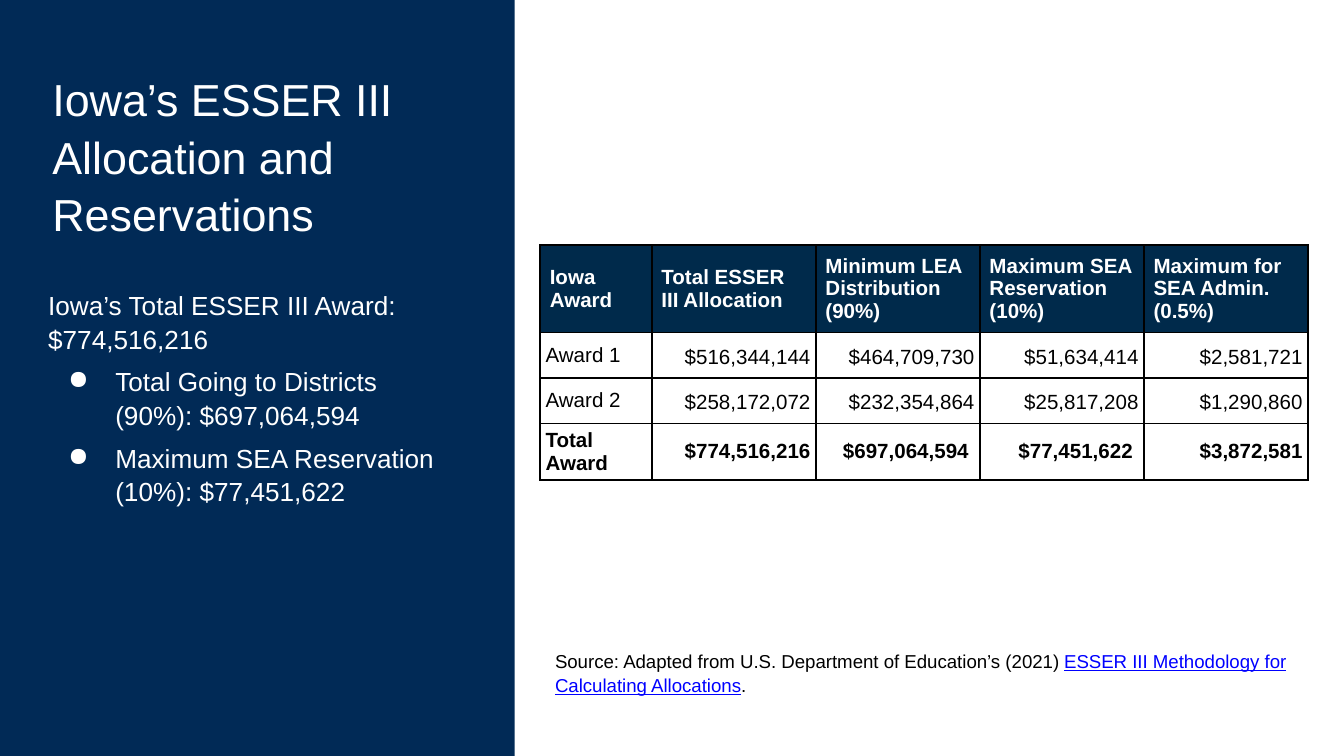
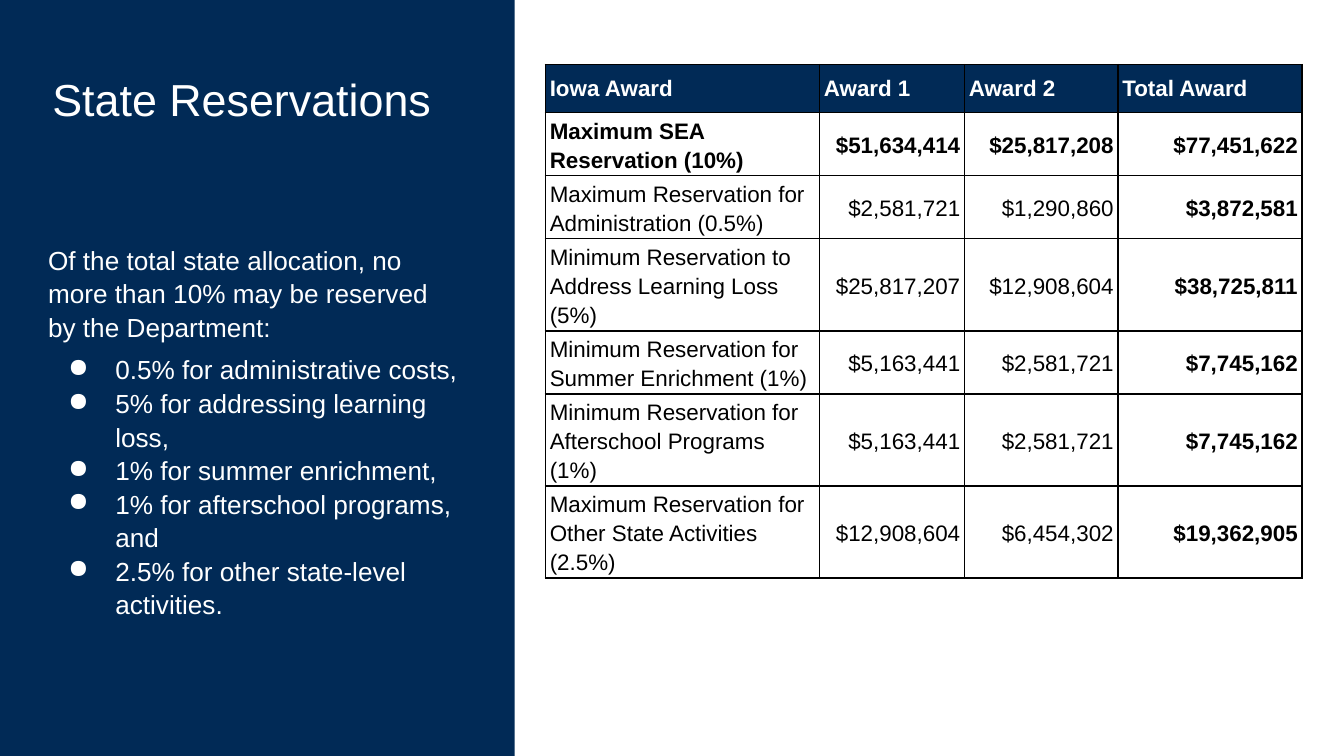
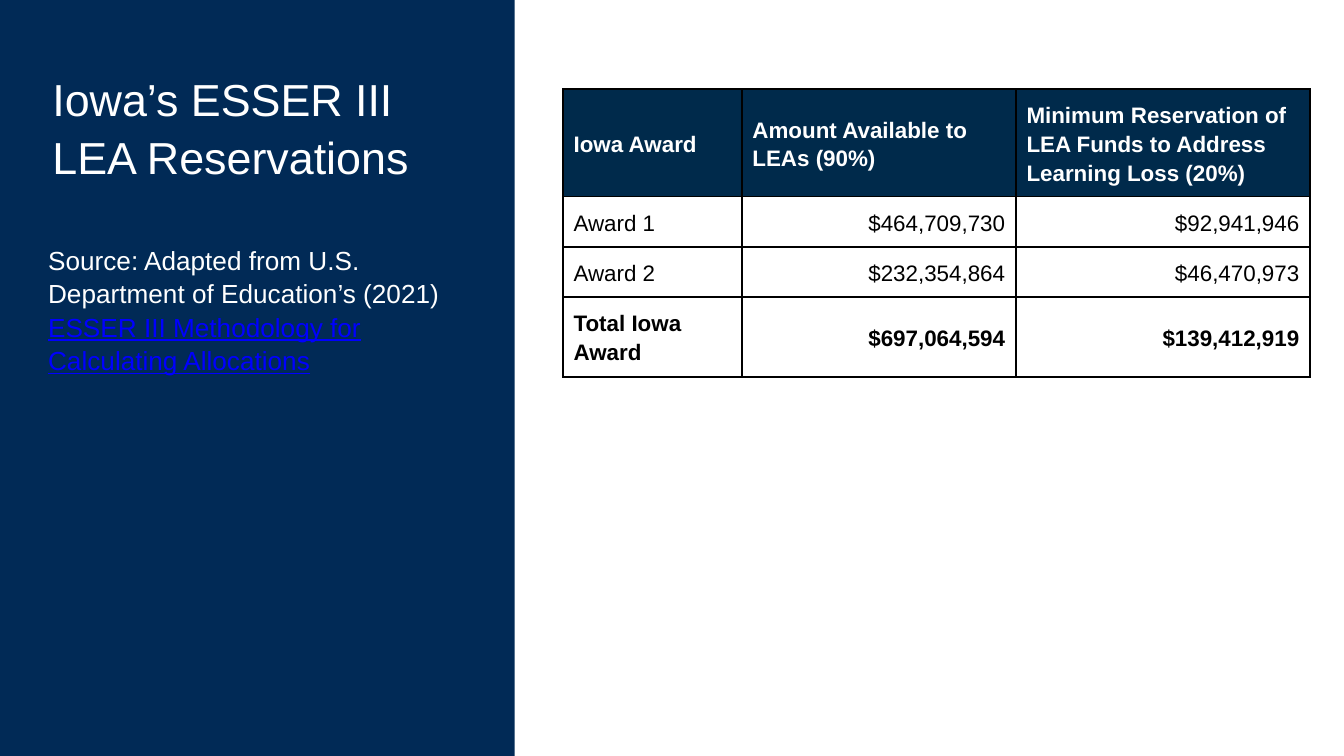
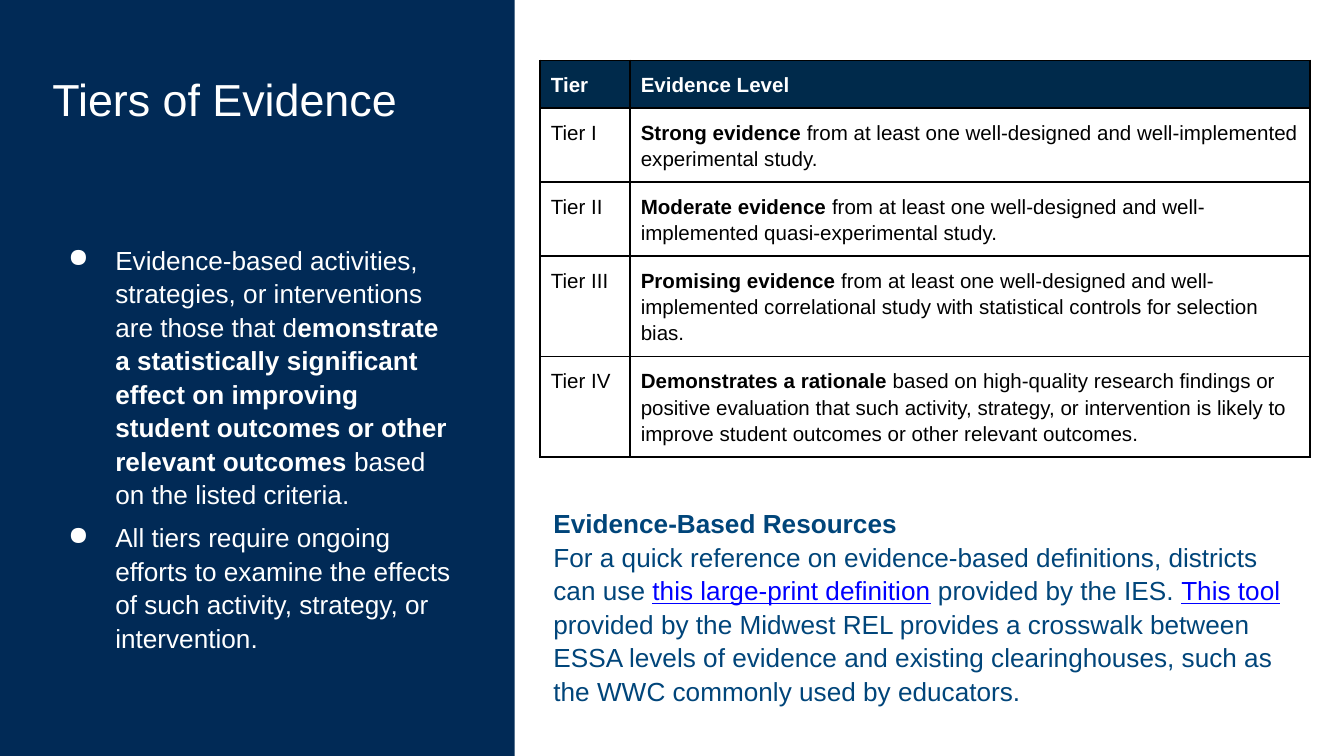
from lxml.etree import SubElement
from pptx import Presentation
from pptx.dml.color import RGBColor
from pptx.enum.shapes import MSO_SHAPE
from pptx.enum.text import MSO_ANCHOR, MSO_AUTO_SIZE, PP_ALIGN
from pptx.oxml import parse_xml
from pptx.oxml.ns import nsdecls, qn
from pptx.util import Cm, Pt

NAVY = RGBColor(0x01, 0x2A, 0x56)
DARK = RGBColor(0x00, 0x2A, 0x4B)
TEAL = RGBColor(0x00, 0x45, 0x7A)
LINK_BLUE = RGBColor(0x00, 0x00, 0xFF)
WHITE = RGBColor(0xFF, 0xFF, 0xFF)
BLACK = RGBColor(0x00, 0x00, 0x00)

FONT = "Arial"
TITLE_ONLY = 5
BOX_SPACING = 1.07
CELL_SPACING = 1.15
BODY_LEFT, BODY_WIDTH, BODY_BOTTOM = 0.66, 8.26, 13.26

BOLD = {"bold": True}
LINK = {"color": LINK_BLUE, "underline": True}


class Deck:
    def __init__(self):
        self.prs = Presentation()
        self.prs.slide_width, self.prs.slide_height = Cm(25.4), Cm(14.29)
        self.layout = self.prs.slide_layouts[TITLE_ONLY]
        self.s = None

    def slide(self, title):
        first = self.s is None
        self.s = self.prs.slides.add_slide(self.layout)
        if first:
            self.panel()
        sp = self.s.shapes.title
        sp.left, sp.top, sp.width, sp.height = Cm(0.74), Cm(1.04), Cm(8.18), Cm(2.77)
        self.frame(sp.text_frame)
        self.fill_paragraph(sp.text_frame.paragraphs[0], title, 24, WHITE)

    def panel(self):
        """Draw the left band and move it to the layout, so that every slide shows it."""
        sp = self.s.shapes.add_shape(MSO_SHAPE.RECTANGLE, Cm(-0.1), Cm(-0.08), Cm(9.83), Cm(14.43))
        sp.shadow.inherit = False
        sp.fill.solid()
        sp.fill.fore_color.rgb = NAVY
        sp.line.fill.background()
        self.layout.shapes._spTree.insert(2, sp._element)

    def frame(self, tf):
        margins = {f"margin_{side}": Cm(0.25) for side in ("left", "top", "right", "bottom")}
        settings = {"word_wrap": True, "auto_size": MSO_AUTO_SIZE.NONE,
                    "vertical_anchor": MSO_ANCHOR.TOP, **margins}
        for name, value in settings.items():
            setattr(tf, name, value)

    def fill_paragraph(self, p, runs, size, color, bold=False, spacing=BOX_SPACING,
                       align=PP_ALIGN.LEFT, before=0):
        """Write runs, each a string or a (string, format) pair, into a paragraph."""
        p.alignment, p.line_spacing, p.space_before = align, spacing, Pt(before)
        for run in [runs] if isinstance(runs, str) else runs:
            text, extra = (run, {}) if isinstance(run, str) else run
            fmt = {"name": FONT, "size": Pt(size), "bold": bold, "color": color, **extra}
            r = p.add_run()
            r.text = text
            r.font.color.rgb = fmt.pop("color")
            for name, value in fmt.items():
                setattr(r.font, name, value)

    def bullet(self, p):
        pPr = p._p.get_or_add_pPr()
        pPr.set("marL", str(Cm(1.27)))
        pPr.set("indent", str(Cm(-0.89)))
        SubElement(SubElement(pPr, qn("a:buClr")), qn("a:srgbClr")).set("val", str(WHITE))
        SubElement(pPr, qn("a:buChar")).set("char", "●")

    def text(self, left, top, width, height, paragraphs, size, color):
        tf = self.s.shapes.add_textbox(Cm(left), Cm(top), Cm(width), Cm(height)).text_frame
        self.frame(tf)
        for i, runs in enumerate(paragraphs):
            p = tf.add_paragraph() if i else tf.paragraphs[0]
            self.fill_paragraph(p, runs, size, color)
        return tf

    def body(self, intro, bullets=(), top=4.32, close=False):
        """Text on the band; close bullets have space above the first one only."""
        paragraphs = [*intro, *bullets]
        tf = self.text(BODY_LEFT, top, BODY_WIDTH, BODY_BOTTOM - top, paragraphs, 14, WHITE)
        for i, p in enumerate(tf.paragraphs):
            p.space_before = Pt(0 if close and i > len(intro) else 5)
            if i >= len(intro):
                self.bullet(p)

    def borders(self, cell):
        tcPr = cell._tc.get_or_add_tcPr()
        for i, side in enumerate("LRTB"):
            tcPr.insert(i, parse_xml(
                f'<a:ln{side} {nsdecls("a")} w="{Pt(1)}"><a:solidFill>'
                f'<a:srgbClr val="{BLACK}"/></a:solidFill></a:ln{side}>'))

    def table(self, left, top, widths, heights, rows, size, pad, head_pad=None, head_fill=DARK,
              label_anchor=MSO_ANCHOR.TOP, bold_rows=(), bold_cols=(),
              single_rows=(), single_cols=()):
        """Amounts go right and middle; single_rows and single_cols are single spaced."""
        tbl = self.s.shapes.add_table(len(rows), len(widths), Cm(left), Cm(top),
                                      Cm(sum(widths)), Cm(sum(heights))).table
        tbl.first_row = tbl.horz_banding = False
        for col, width in zip(tbl.columns, widths):
            col.width = Cm(width)
        for row, height in zip(tbl.rows, heights):
            row.height = Cm(height)
        for i, row in enumerate(rows):
            for j, content in enumerate(row):
                cell, head = tbl.cell(i, j), i == 0
                amount = content[0] == "$"
                x, y = head_pad if head and head_pad else pad
                settings = {
                    "margin_left": Cm(x), "margin_right": Cm(x),
                    "margin_top": Cm(y), "margin_bottom": Cm(y),
                    "vertical_anchor": MSO_ANCHOR.MIDDLE if head or amount else label_anchor}
                for name, value in settings.items():
                    setattr(cell, name, value)
                if head:
                    cell.fill.solid()
                    cell.fill.fore_color.rgb = head_fill
                else:
                    cell.fill.background()
                self.borders(cell)
                single = i in single_rows or j in single_cols
                self.fill_paragraph(
                    cell.text_frame.paragraphs[0], content, size, WHITE if head else BLACK,
                    bold=head or i in bold_rows or j in bold_cols,
                    spacing=1.0 if single else CELL_SPACING,
                    align=PP_ALIGN.RIGHT if amount else PP_ALIGN.LEFT)


def allocation(deck):
    deck.slide("Iowa’s ESSER III Allocation and Reservations")
    deck.body(["Iowa’s Total ESSER III Award: $774,516,216"],
              ["Total Going to Districts (90%): $697,064,594",
               "Maximum SEA Reservation (10%): $77,451,622"], top=5.18)
    deck.table(10.21, 4.63, [2.11] + [3.1] * 4, [1.63, 0.86, 0.86, 1.06], [
        ["Iowa Award", "Total ESSER III Allocation", "Minimum LEA Distribution (90%)",
         "Maximum SEA Reservation (10%)", "Maximum for SEA Admin. (0.5%)"],
        ["Award 1", "$516,344,144", "$464,709,730", "$51,634,414", "$2,581,721"],
        ["Award 2", "$258,172,072", "$232,354,864", "$25,817,208", "$1,290,860"],
        ["Total Award", "$774,516,216", "$697,064,594 ", "$77,451,622 ", "$3,872,581"],
    ], 11, (0.1, 0.1), head_pad=(0.18, 0.18), label_anchor=MSO_ANCHOR.MIDDLE,
        bold_rows=[3], single_rows=[0, 3], single_cols=[0])
    deck.text(10.24, 12.01, 14.53, 1.37, [[
        "Source: Adapted from U.S. Department of Education’s (2021) ",
        ("ESSER III Methodology for Calculating Allocations", LINK), "."]], 10, BLACK)


def state_reservations(deck):
    deck.slide("State Reservations")
    deck.body(["Of the total state allocation, no more than 10% may be reserved by the Department:"],
              ["0.5% for administrative costs,", "5% for addressing learning loss,",
               "1% for summer enrichment,", "1% for afterschool programs, and",
               "2.5% for other state-level activities."], close=True)
    two_lines, three_lines = 1.19, 1.74
    heights = [0.91, two_lines, two_lines, three_lines, two_lines, three_lines, three_lines]
    deck.table(10.31, 1.22, [5.18, 2.74, 2.9, 3.48], heights, [
        ["Iowa Award", "Award 1", "Award 2", "Total Award"],
        ["Maximum SEA Reservation (10%)", "$51,634,414", "$25,817,208", "$77,451,622"],
        ["Maximum Reservation for Administration (0.5%)", "$2,581,721", "$1,290,860", "$3,872,581"],
        ["Minimum Reservation to Address Learning Loss (5%)",
         "$25,817,207", "$12,908,604", "$38,725,811"],
        ["Minimum Reservation for Summer Enrichment (1%)",
         "$5,163,441", "$2,581,721", "$7,745,162"],
        ["Minimum Reservation for Afterschool Programs (1%)",
         "$5,163,441", "$2,581,721", "$7,745,162"],
        ["Maximum Reservation for Other State Activities (2.5%)",
         "$12,908,604", "$6,454,302", "$19,362,905"],
    ], 12, (0.08, 0.05), head_fill=NAVY, label_anchor=MSO_ANCHOR.BOTTOM,
        bold_rows=[1], bold_cols=[3], single_rows=[0])


def lea_reservations(deck):
    deck.slide("Iowa’s ESSER III LEA Reservations")
    deck.body([["Source: Adapted from U.S. Department of Education’s (2021)",
                (" ESSER III Methodology for Calculating Allocations", LINK)]])
    deck.table(10.64, 1.68, [3.38, 5.18, 5.56], [2.02, 0.95, 0.95, 1.51], [
        ["Iowa Award", "Amount Available to LEAs (90%)",
         "Minimum Reservation of LEA Funds to Address Learning Loss (20%)"],
        ["Award 1", "$464,709,730", "$92,941,946"],
        ["Award 2", "$232,354,864", "$46,470,973"],
        ["Total Iowa Award", "$697,064,594", "$139,412,919"],
    ], 12, (0.2, 0.2), bold_rows=[3])


def evidence_tiers(deck):
    deck.slide("Tiers of Evidence")
    deck.body([], [
        ["Evidence-based activities, strategies, or interventions are those that d",
         ("emonstrate a statistically significant effect on improving student outcomes "
          "or other relevant outcomes ", BOLD),
         "based on the listed criteria."],
        "All tiers require ongoing efforts to examine the effects of such activity, "
        "strategy, or intervention."])
    study = " from at least one well-designed and well-implemented "
    deck.table(10.21, 1.14, [1.7, 12.85], [0.89, 1.4, 1.4, 1.9, 1.9], [
        ["Tier", "Evidence Level"],
        ["Tier I", [("Strong evidence", BOLD), study + "experimental study."]],
        ["Tier II", [("Moderate evidence", BOLD), study + "quasi-experimental study."]],
        ["Tier III", [("Promising evidence", BOLD),
                      study + "correlational study with statistical controls for selection bias."]],
        ["Tier IV", [("Demonstrates a rationale", BOLD),
                     " based on high-quality research findings or positive evaluation that such "
                     "activity, strategy, or intervention is likely to improve student outcomes "
                     "or other relevant outcomes."]],
    ], 11, (0.2, 0.2))
    deck.text(10.21, 9.3, 14.55, 4.11, [
        [("Evidence-Based Resources", BOLD)],
        ["For a quick reference on evidence-based definitions, districts can use ",
         ("this large-print definition", LINK), " provided by the IES. ", ("This tool", LINK),
         " provided by the Midwest REL provides a crosswalk between ESSA levels of evidence "
         "and existing clearinghouses, such as the WWC commonly used by educators."],
    ], 14, TEAL)


def main():
    deck = Deck()
    for build in (allocation, state_reservations, lea_reservations, evidence_tiers):
        build(deck)
    deck.prs.save("out.pptx")


if __name__ == "__main__":
    main()
